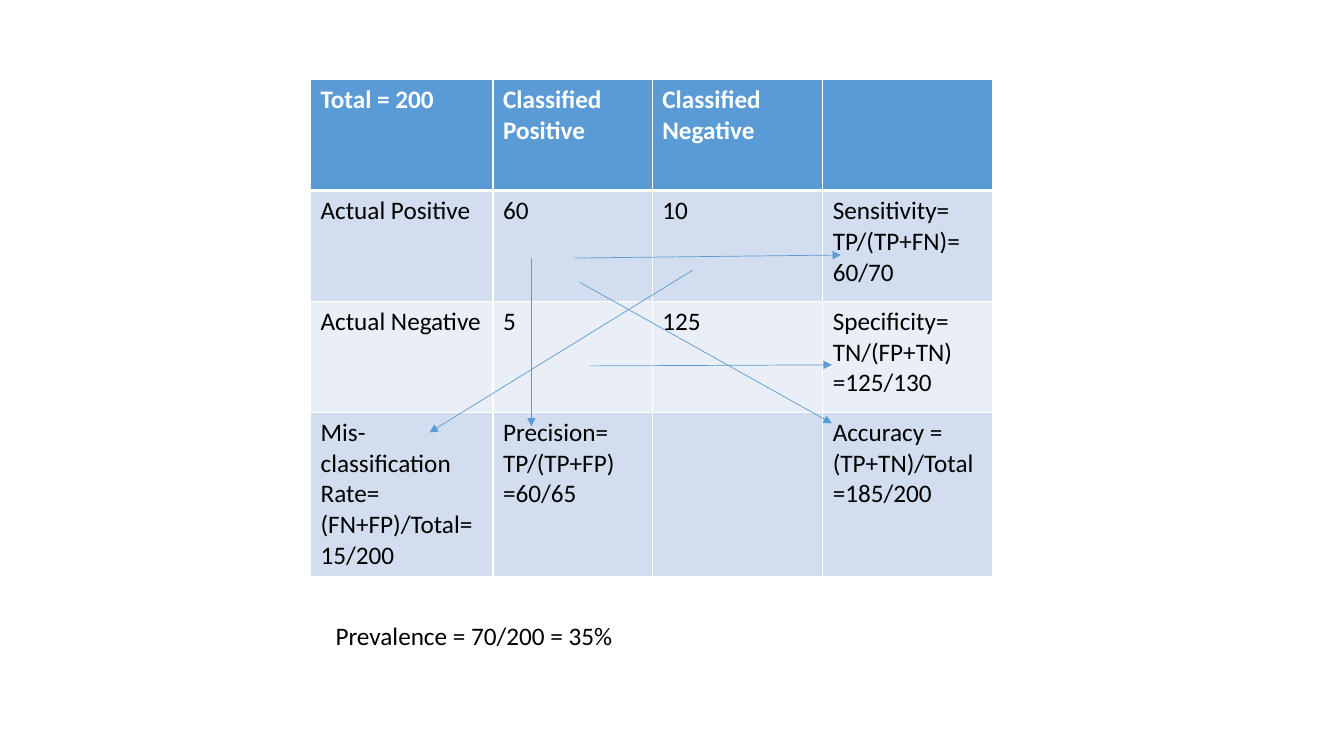
import pptx
import pptx.dml.color
import pptx.enum.shapes
import pptx.oxml.ns
import pptx.util
from lxml import etree

Inches = pptx.util.Inches
Pt = pptx.util.Pt

COLOURS = {
    "header": "5B9BD5",
    "band": "D2DEEF",
    "light": "EAEFF7",
    "white": "FFFFFF",
    "text": "000000",
    "arrow": "5B9BD5",
}
FONT = "Calibri"
COLUMN_WIDTHS = [1.81, 1.58, 1.69, 1.69]
ROW_HEIGHTS = [1.1, 1.1, 1.1, 1.6]
ROW_FILLS = ["header", "band", "light", "band"]
MATRIX = [
    ["Total = 200", "Classified Positive", "Classified Negative", ""],
    ["Actual Positive", "60", "10", "Sensitivity=\nTP/(TP+FN)=\n60/70"],
    ["Actual Negative", "5", "125", "Specificity=\nTN/(FP+TN)\n=125/130"],
    [
        "Mis-classification Rate=\n(FN+FP)/Total=\n15/200",
        "Precision=\nTP/(TP+FP)\n=60/65",
        "",
        "Accuracy =\n(TP+TN)/Total\n=185/200",
    ],
]
ARROWS = [
    ((2.77, 2.84), (5.17, 2.83)),
    ((2.62, 1.77), (5.26, 1.74)),
    ((2.67, 2.01), (5.17, 3.41)),
    ((2.19, 1.77), (2.19, 3.44)),
    ((3.79, 1.89), (1.18, 3.5)),
]


def colour(name):
    return pptx.dml.color.RGBColor.from_string(COLOURS[name])


def add_element(parent, tag, **attributes):
    return etree.SubElement(parent, pptx.oxml.ns.qn(tag), **attributes)


def style_text(frame, colour_name, bold=False):
    for para in frame.paragraphs:
        for span in para.runs:
            span.font.name = FONT
            span.font.size = Pt(18)
            span.font.bold = bold
            span.font.color.rgb = colour(colour_name)


def style_cell(cell, row):
    properties = cell._tc.get_or_add_tcPr()
    widths = {"L": 1, "R": 1, "T": 3 if row == 1 else 1, "B": 3 if row == 0 else 1}
    for side, width in widths.items():
        border = add_element(properties, f"a:ln{side}", w=str(Pt(width)))
        fill = add_element(border, "a:solidFill")
        add_element(fill, "a:srgbClr", val=COLOURS["white"])
    cell.fill.solid()
    cell.fill.fore_color.rgb = colour(ROW_FILLS[row])
    style_text(cell.text_frame, "white" if row == 0 else "text", bold=row == 0)


def add_matrix(page, left, top):
    table = page.shapes.add_table(
        len(MATRIX), len(COLUMN_WIDTHS), Inches(left), Inches(top),
        Inches(sum(COLUMN_WIDTHS)), Inches(sum(ROW_HEIGHTS)),
    ).table
    for column, width in zip(table.columns, COLUMN_WIDTHS):
        column.width = Inches(width)
    for row, (height, texts) in enumerate(zip(ROW_HEIGHTS, MATRIX)):
        table.rows[row].height = Inches(height)
        for column, text in enumerate(texts):
            cell = table.cell(row, column)
            cell.text_frame.text = text
            style_cell(cell, row)


def add_arrows(page, left, top):
    for (start_x, start_y), (end_x, end_y) in ARROWS:
        arrow = page.shapes.add_connector(
            pptx.enum.shapes.MSO_CONNECTOR.STRAIGHT,
            Inches(left + start_x), Inches(top + start_y),
            Inches(left + end_x), Inches(top + end_y),
        )
        arrow.line.color.rgb = colour("arrow")
        arrow.line.width = Pt(0.5)
        add_element(arrow.line._get_or_add_ln(), "a:tailEnd", type="triangle")
        add_element(arrow._element.spPr, "a:effectLst")


def add_prevalence(page, left, top, width, height):
    box = page.shapes.add_textbox(
        Inches(left), Inches(top), Inches(width), Inches(height)
    )
    box.text_frame.word_wrap = False
    box.text_frame.text = "Prevalence = 70/200 = 35%"
    style_text(box.text_frame, "text")


def main():
    deck = pptx.Presentation()
    deck.slide_width = Inches(13.33)
    deck.slide_height = Inches(7.5)
    page = deck.slides.add_slide(deck.slide_layouts[6])
    add_matrix(page, 3.08, 0.79)
    add_prevalence(page, 3.23, 6.11, 3.04, 0.4)
    add_arrows(page, 3.08, 0.79)
    deck.save("out.pptx")


if __name__ == "__main__":
    main()
